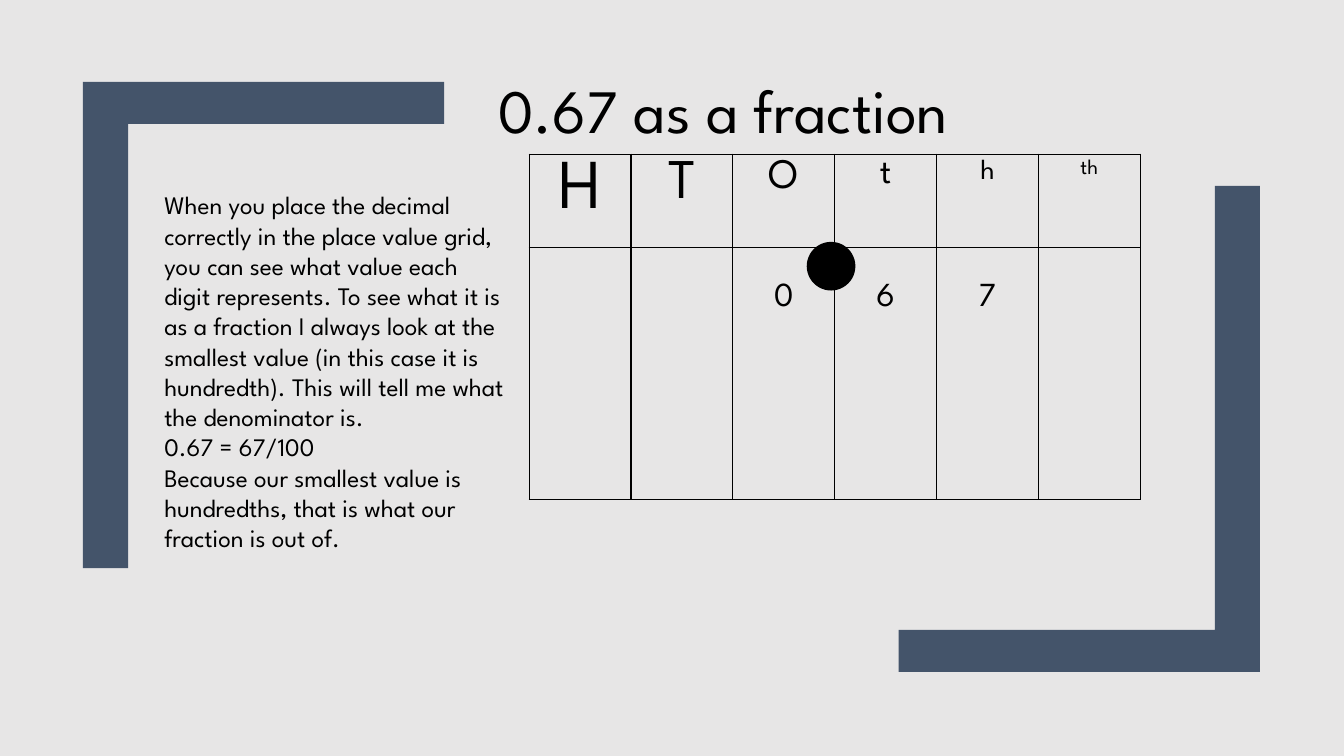
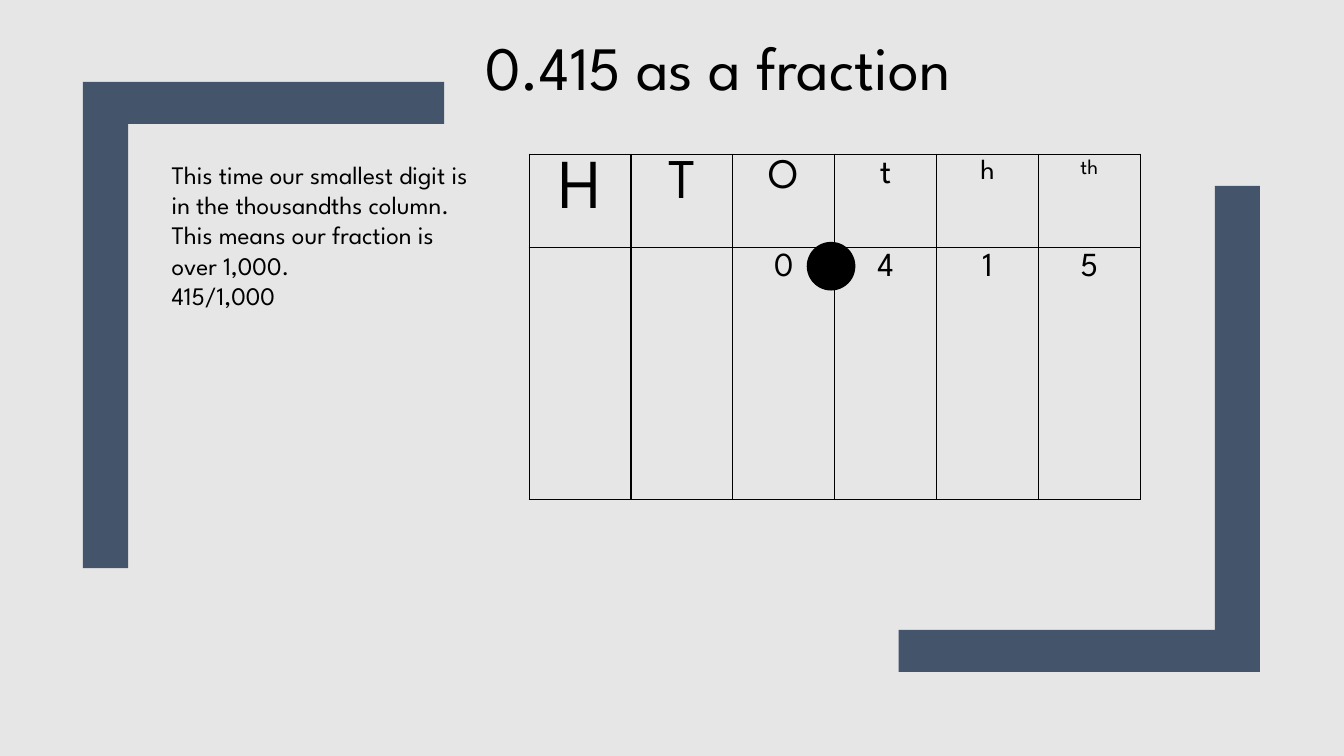
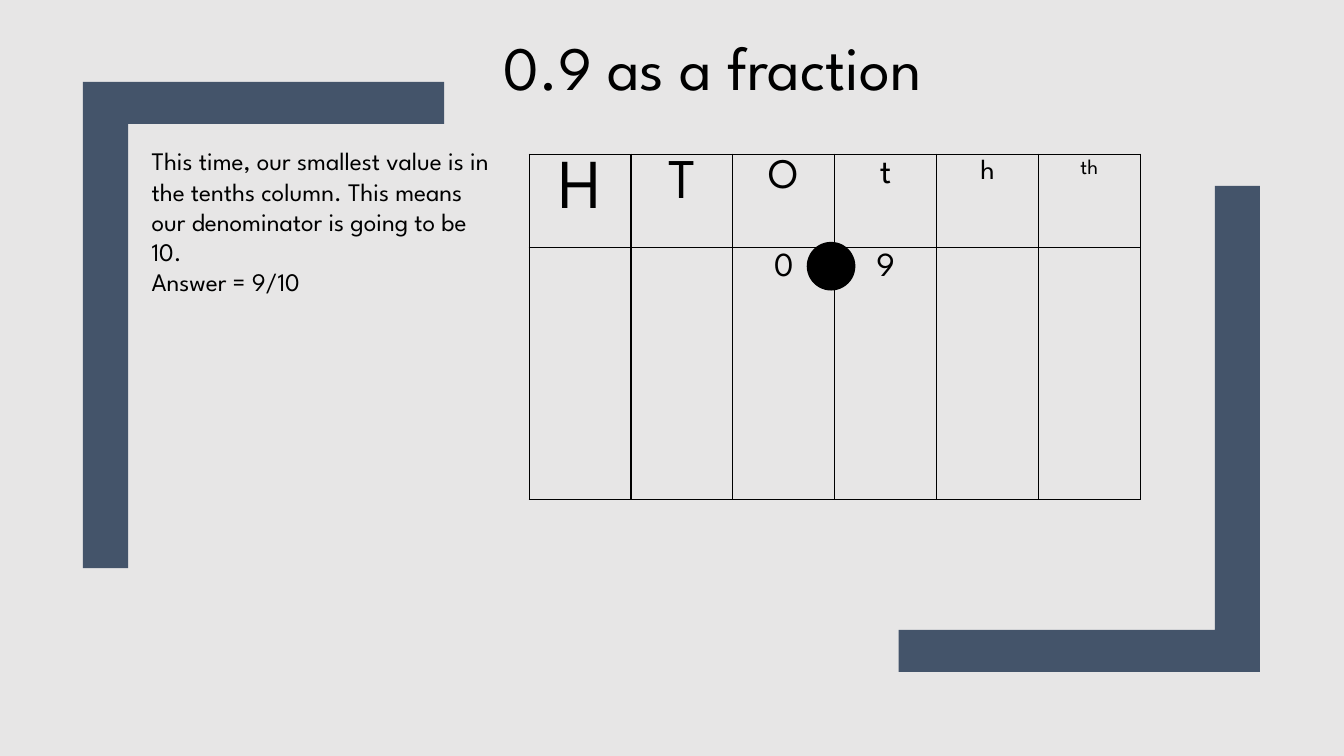
"""Three slides that turn a decimal into a fraction with a place value grid."""
from dataclasses import dataclass

from lxml.etree import SubElement
from pptx import Presentation
from pptx.dml.color import RGBColor
from pptx.enum.shapes import MSO_SHAPE, PP_PLACEHOLDER
from pptx.enum.text import MSO_ANCHOR, MSO_AUTO_SIZE, PP_ALIGN
from pptx.oxml.ns import qn
from pptx.util import Pt

PX = 9525


@dataclass(frozen=True)
class Theme:
    """Colours, font and type sizes of the deck."""
    paper: RGBColor = RGBColor(0xE7, 0xE6, 0xE6)
    frame: RGBColor = RGBColor(0x44, 0x54, 0x6A)
    ink: RGBColor = RGBColor(0, 0, 0)
    font: str = "League Spartan"
    title: int = 44
    body: int = 18
    digit: int = 24
    line: int = 1


THEME = Theme()
HEADS = {"H": 50, "T": 40, "O": 30, "t": 25, "h": 20, "th": 15}
ROWS = (89, 240)
COL = 97

SLIDES = [
    dict(
        title="0.67 as a fraction", spot=(209, 64), digits=["", "", "0", "6", "7", ""],
        inset=34, box=(147, 176, 346, 417),
        lines=[
            "When you place the decimal correctly in the place value grid, you can see "
            "what value each digit represents. To see what it is as a fraction I always "
            "look at the smallest value (in this case it is hundredth). This will tell "
            "me what the denominator is.",
            "0.67 = 67/100",
            "Because our smallest value is hundredths, that is what our fraction is out of.",
        ],
    ),
    dict(
        title="0.415 as a fraction", spot=(204, 23), digits=["", "", "0", "4", "1", "5"],
        inset=5, box=(154, 147, 305, 184),
        lines=[
            "This time our smallest digit is in the thousandths column. This means our "
            "fraction is over 1,000.",
            "415/1,000",
        ],
    ),
    dict(
        title="0.9 as a fraction", spot=(199, 23), digits=["", "", "0", "9", "", ""],
        inset=5, box=(135, 134, 349, 156),
        lines=[
            "This time, our smallest value is in the tenths column. This means our "
            "denominator is going to be 10.",
            "Answer = 9/10",
        ],
    ),
]


def px(*sizes):
    """Turn px lengths into EMU."""
    return [size * PX for size in sizes]


def style(para, size, align=PP_ALIGN.LEFT):
    """Give a paragraph and its runs the deck's type."""
    para.alignment = align
    for item in (para, *para.runs):
        item.font.name = THEME.font
        item.font.size = Pt(size)
        item.font.color.rgb = THEME.ink


def paint(shape, colour):
    """Fill and outline a shape in one colour, with no shadow."""
    shape.shadow.inherit = False
    shape.fill.solid()
    shape.fill.fore_color.rgb = colour


def add_angle(slide, x, y, way):
    """Draw an L-shaped bar from its outer corner, way being 1 or -1."""
    wide, tall, side, bar = (way * size for size in (344, 463, 43, 40))
    form = slide.shapes.build_freeform(x, y, scale=PX)
    form.add_line_segments([
        (x + wide, y), (x + wide, y + bar), (x + side, y + bar),
        (x + side, y + tall), (x, y + tall),
    ])
    angle = form.convert_to_shape()
    paint(angle, THEME.frame)
    angle.line.fill.background()
    return angle


def set_frame(slide, layout):
    """Put the background and both angles on the shared layout."""
    layout.background.fill.solid()
    layout.background.fill.fore_color.rgb = THEME.paper
    for holder in list(layout.placeholders):
        if holder.placeholder_format.type != PP_PLACEHOLDER.TITLE:
            layout.shapes.element.remove(holder.element)
    angles = [add_angle(slide, 1200, 640, -1), add_angle(slide, 79, 78, 1)]
    for angle in angles:
        layout.shapes.element.append(angle.element)


def set_title(slide, text, spot):
    """Place and format the title."""
    title = slide.shapes.title
    title.left, title.top, title.width, title.height = px(*spot, 960, 81)
    frame = title.text_frame
    frame.text = text
    frame.auto_size = MSO_AUTO_SIZE.NONE
    frame.vertical_anchor = MSO_ANCHOR.TOP
    style(frame.paragraphs[0], THEME.title, PP_ALIGN.CENTER)


def add_edges(cell):
    """Line all four sides of a cell."""
    props = cell._tc.get_or_add_tcPr()
    for spot, name in enumerate(("lnL", "lnR", "lnT", "lnB")):
        edge = SubElement(props, qn(f"a:{name}"), w=str(Pt(THEME.line)))
        fill = SubElement(edge, qn("a:solidFill"))
        SubElement(fill, qn("a:srgbClr"), val=str(THEME.ink))
        props.insert(spot, edge)


def set_cell(cell, text, size):
    """Write centred text in a clear, lined cell."""
    cell.text_frame.text = text
    style(cell.text_frame.paragraphs[0], size, PP_ALIGN.CENTER)
    cell.fill.background()
    add_edges(cell)


def add_grid(slide, digits, inset):
    """Draw the place value grid with its digits."""
    place = px(504, 147, COL * len(HEADS), sum(ROWS))
    grid = slide.shapes.add_table(len(ROWS), len(HEADS), *place).table
    grid.first_row = grid.horz_banding = False
    for row, tall in zip(grid.rows, ROWS):
        row.height = tall * PX
    for col, (head, size) in enumerate(HEADS.items()):
        grid.columns[col].width = COL * PX
        set_cell(grid.cell(0, col), head, size)
        cell = grid.cell(1, col)
        set_cell(cell, digits[col], THEME.digit)
        cell.margin_top = inset * PX


def add_dot(slide):
    """Draw the decimal point on the grid."""
    dot = slide.shapes.add_shape(MSO_SHAPE.OVAL, *px(769, 231, 45, 45))
    paint(dot, THEME.ink)
    dot.line.color.rgb = THEME.ink
    dot.line.width = Pt(THEME.line)


def add_note(slide, lines, box):
    """Write the worked answer beside the grid."""
    frame = slide.shapes.add_textbox(*px(*box)).text_frame
    frame.word_wrap = True
    frame.text = "\n".join(lines)
    for para in frame.paragraphs:
        style(para, THEME.body)


def main():
    """Build and save the deck."""
    deck = Presentation()
    deck.slide_width, deck.slide_height = px(1280, 720)
    layout = deck.slide_layouts.get_by_name("Title Only")
    for page, part in enumerate(SLIDES):
        slide = deck.slides.add_slide(layout)
        if page == 0:
            set_frame(slide, layout)
        set_title(slide, part["title"], part["spot"])
        add_grid(slide, part["digits"], part["inset"])
        add_dot(slide)
        add_note(slide, part["lines"], part["box"])
    deck.save("out.pptx")


if __name__ == "__main__":
    main()
